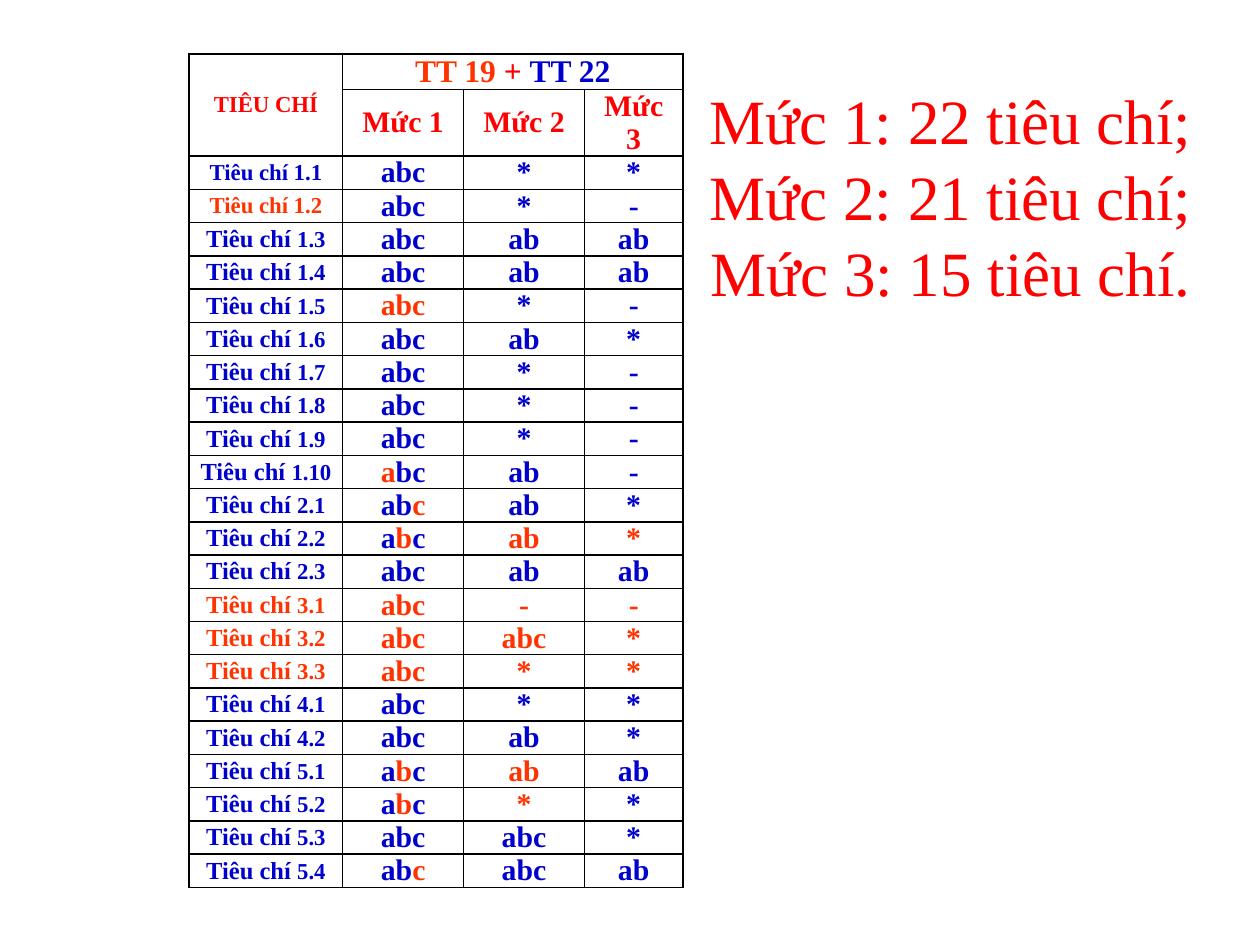
from lxml import etree
from pptx import Presentation, util as u
from pptx.dml.color import RGBColor
from pptx.enum import text as t
from pptx.oxml.ns import qn

RED = RGBColor(0xFF, 0x00, 0x00)
ORANGE = RGBColor(0xFF, 0x33, 0x00)
BLUE = RGBColor(0x00, 0x00, 0xCC)
BLACK = "000000"
FACE = "Times New Roman"
LABEL = "Tiêu chí "

COLS = [1.22, 0.96, 0.96, 0.78]
TOP, SUB, ROW = 0.28, 0.53, 0.26

# Square brackets mark the orange parts of a cell.
LEVELS = """
1.1 abc * *
[1.2] abc * -
1.3 abc ab ab
1.4 abc ab ab
1.5 [abc] * -
1.6 abc ab *
1.7 abc * -
1.8 abc * -
1.9 abc * -
1.10 [a]bc ab -
2.1 ab[c] ab *
2.2 a[b]c [ab] [*]
2.3 abc ab ab
[3.1] [abc] [-] [-]
[3.2] [abc] [abc] [*]
[3.3] [abc] [*] [*]
4.1 abc * *
4.2 abc ab *
5.1 a[b]c [ab] ab
5.2 a[b]c [*] *
5.3 abc abc *
5.4 ab[c] abc ab
"""
rows = [line.split() for line in LEVELS.split("\n") if line]


def write(cell, parts):
    """Fill a cell with (words, size, colour) runs."""
    para = cell.text_frame.paragraphs[0]
    para.alignment = t.PP_ALIGN.CENTER
    for words, size, color in parts:
        run = para.add_run()
        run.text = words
        look = {"name": FACE, "size": u.Pt(size), "bold": True}
        for key, value in look.items():
            setattr(run.font, key, value)
        run.font.color.rgb = color


def split(mark, size):
    """Turn bracketed text into blue and orange runs."""
    parts = mark.replace("]", "[").split("[")
    return [(part, size, ORANGE if i % 2 else BLUE)
            for i, part in enumerate(parts) if part]


prs = Presentation()
prs.slide_width, prs.slide_height = u.Inches(10), u.Inches(7.5)
slide = prs.slides.add_slide(prs.slide_layouts[5])

# Title
title = slide.shapes.title
place = {"left": 5.42, "top": 0.26, "width": 4.25, "height": 2.58}
for key, value in place.items():
    setattr(title, key, u.Inches(value))
frame = title.text_frame
frame.text = "Mức 1: 22 tiêu chí; Mức 2: 21 tiêu chí; Mức 3: 15 tiêu chí."
frame.word_wrap = True
frame.vertical_anchor = t.MSO_ANCHOR.MIDDLE
para = frame.paragraphs[0]
para.alignment = t.PP_ALIGN.CENTER
font = para.runs[0].font
font.name, font.size = FACE, u.Pt(36)
font.color.rgb = RED

# Table grid
highs = [TOP, SUB] + [ROW] * len(rows)
table = slide.shapes.add_table(
    len(highs), len(COLS), u.Inches(1.5), u.Inches(0.43),
    u.Inches(sum(COLS)), u.Inches(sum(highs))).table
table.first_row = table.horz_banding = False
for col, width in zip(table.columns, COLS):
    col.width = u.Inches(width)
for row, high in zip(table.rows, highs):
    row.height = u.Inches(high)

form = {"margin_left": u.Inches(0.07), "margin_right": u.Inches(0.07),
        "margin_top": 0, "margin_bottom": 0,
        "vertical_anchor": t.MSO_ANCHOR.MIDDLE}
for cell in table.iter_cells():
    for key, value in form.items():
        setattr(cell, key, value)
    props = cell._tc.get_or_add_tcPr()
    for side in ("lnL", "lnR", "lnT", "lnB"):
        line = etree.SubElement(props, qn("a:" + side), w=str(u.Pt(1)))
        fill = etree.SubElement(line, qn("a:solidFill"))
        etree.SubElement(fill, qn("a:srgbClr"), val=BLACK)
    cell.fill.background()

# Header
table.cell(0, 0).merge(table.cell(1, 0))
table.cell(0, 1).merge(table.cell(0, 3))
write(table.cell(0, 0), [("TIÊU CHÍ", 13, RED)])
write(table.cell(0, 1), [("TT 19 ", 18, ORANGE), ("+ ", 18, RED),
                         ("TT 22", 18, BLUE)])
for c in (1, 2, 3):
    write(table.cell(1, c), [(f"Mức {c}", 17, RED)])
table.cell(1, 3).vertical_anchor = t.MSO_ANCHOR.TOP

# Criteria
for r, (code, *marks) in enumerate(rows, 2):
    number = split(code, 13)
    size = 13 if r < 4 else 14
    write(table.cell(r, 0), [(LABEL, size, number[0][2])] + number)
    for c, mark in enumerate(marks, 1):
        write(table.cell(r, c), split(mark, 17))

prs.save("out.pptx")
